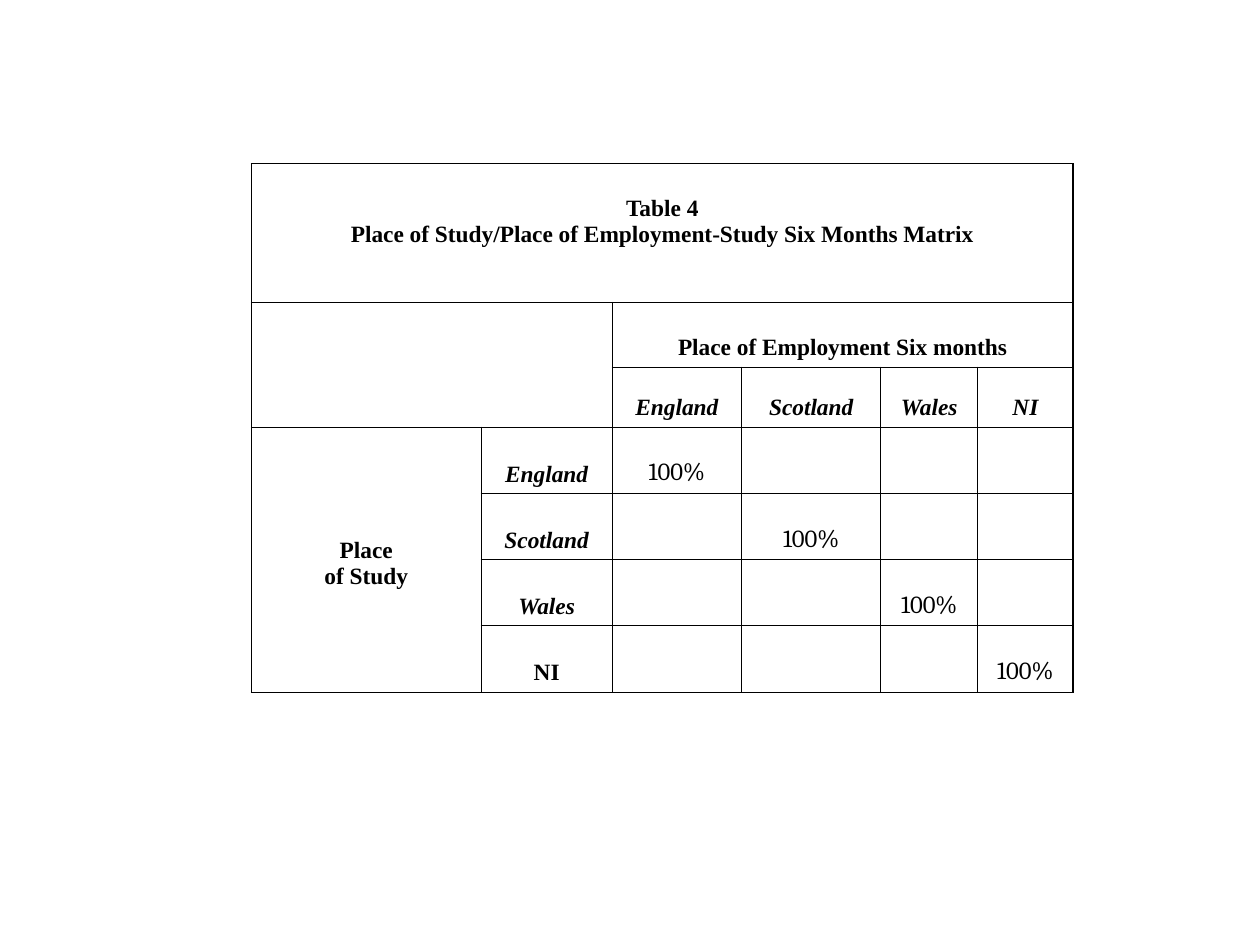
from lxml import etree
from pptx import Presentation
from pptx.dml.color import RGBColor
from pptx.enum.text import MSO_ANCHOR, PP_ALIGN
from pptx.oxml.ns import qn
from pptx.util import Cm, Pt

BLACK = RGBColor(0x00, 0x00, 0x00)
CENTER = PP_ALIGN.CENTER
TOP = MSO_ANCHOR.TOP
MIDDLE = MSO_ANCHOR.MIDDLE
BOTTOM = MSO_ANCHOR.BOTTOM


def write_cell(cell, text, font="Times New Roman", size=19, bold=True,
               italic=False, anchor=BOTTOM, margin_top=0.18):
    cell.vertical_anchor = anchor
    cell.margin_top = Cm(margin_top)
    cell.text = text
    for para in cell.text_frame.paragraphs:
        para.alignment = CENTER
        for span in para.runs:
            span.font.name = font
            span.font.size = Pt(size)
            span.font.bold = bold
            span.font.italic = italic
            span.font.color.rgb = BLACK


def draw_borders(cell):
    properties = cell._tc.get_or_add_tcPr()
    for side in ("a:lnL", "a:lnR", "a:lnT", "a:lnB"):
        line = etree.SubElement(properties, qn(side), w=str(Pt(1)))
        fill = etree.SubElement(line, qn("a:solidFill"))
        etree.SubElement(fill, qn("a:srgbClr"), val=str(BLACK))


deck = Presentation()
deck.slide_width = Cm(36.12)
deck.slide_height = Cm(27.1)
page = deck.slides.add_slide(deck.slide_layouts[6])

column_widths = [6.58, 3.76, 3.71, 3.99, 2.78, 2.73]
row_heights = [3.98, 1.86, 1.72] + [1.9] * 4
frame = page.shapes.add_table(
    len(row_heights), len(column_widths), Cm(7.21), Cm(4.69),
    Cm(sum(column_widths)), Cm(sum(row_heights)))
matrix = frame.table
matrix.first_row = False
matrix.horz_banding = False

for column, width in zip(matrix.columns, column_widths):
    column.width = Cm(width)
for row, height in zip(matrix.rows, row_heights):
    row.height = Cm(height)

for cell in matrix.iter_cells():
    draw_borders(cell)
    cell.fill.background()
    cell.margin_left = cell.margin_right = Cm(0.36)
    cell.margin_top = cell.margin_bottom = Cm(0.18)

matrix.cell(0, 0).merge(matrix.cell(0, 5))
matrix.cell(1, 0).merge(matrix.cell(2, 1))
matrix.cell(1, 2).merge(matrix.cell(1, 5))
matrix.cell(3, 0).merge(matrix.cell(6, 0))

write_cell(matrix.cell(0, 0),
           "Table 4\nPlace of Study/Place of Employment-Study Six Months Matrix",
           anchor=TOP, margin_top=0.93)
write_cell(matrix.cell(1, 2), "Place of Employment Six months")
write_cell(matrix.cell(3, 0), "Place\nof Study", anchor=MIDDLE, margin_top=0.42)

for index, country in enumerate(["England", "Scotland", "Wales", "NI"]):
    write_cell(matrix.cell(2, 2 + index), country, italic=True)
    write_cell(matrix.cell(3 + index, 1), country, italic=country != "NI")
    write_cell(matrix.cell(3 + index, 2 + index), "100%",
               font="Cambria", size=20, bold=False)

deck.save("out.pptx")
